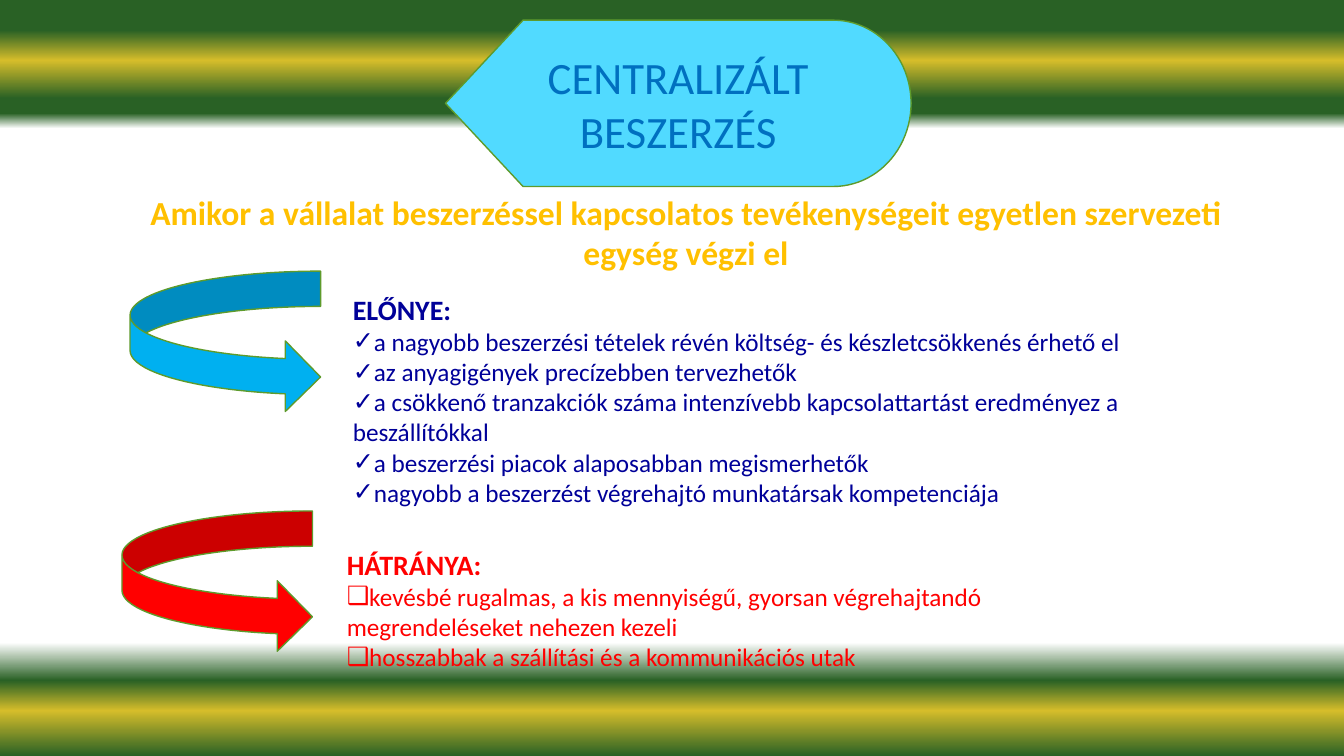
from dataclasses import dataclass

from lxml.etree import SubElement as Sub
from pptx import Presentation
from pptx.dml.color import RGBColor as Rgb
from pptx.enum.shapes import MSO_SHAPE as Form
from pptx.enum.text import MSO_ANCHOR as Anchor, MSO_AUTO_SIZE as Fit, PP_ALIGN as Align
from pptx.oxml.ns import qn
from pptx.util import Pt


@dataclass(frozen=True)
class Theme:
    font: str = "Calibri"
    green: str = "296125"
    gold: str = "D6BD2A"
    white: str = "FFFFFF"
    edge: str = "5E9B2C"
    sky: str = "51DAFF"
    title: str = "0070C0"
    lead: str = "FFC000"
    blue: str = "00B0F0"
    navy: str = "000099"
    red: str = "FF0000"
    title_size: int = 32
    lead_size: int = 24
    head_size: int = 20
    item_size: int = 18


class Page:
    def __init__(self, slide, theme):
        self.slide = slide
        self.theme = theme

    def bands(self, stops):
        """Fill the background with a top-to-bottom gradient of (percent, colour)."""
        fill = self.slide.background.fill
        fill.gradient()
        fill.gradient_angle = 270
        stop_list = self.slide.element.find(".//" + qn("a:gsLst"))
        stop_list.clear()
        for place, color in stops:
            stop = Sub(stop_list, qn("a:gs"), pos=str(place * 1000))
            Sub(stop, qn("a:srgbClr"), val=color)

    def shape(self, form, box, color):
        shape = self.slide.shapes.add_shape(form, *map(Pt, box))
        shape.shadow.inherit = False
        shape.fill.solid()
        shape.fill.fore_color.rgb = Rgb.from_string(color)
        shape.line.color.rgb = Rgb.from_string(self.theme.edge)
        shape.line.width = Pt(1)

    def frame(self, holder, box, anchor=Anchor.TOP):
        """Move a text holder to the front and into its box."""
        holder.element.getparent().append(holder.element)
        holder.left, holder.top, holder.width, holder.height = map(Pt, box)
        frame = holder.text_frame
        frame.word_wrap = True
        frame.auto_size = Fit.NONE
        frame.vertical_anchor = anchor
        return frame

    def text(self, para, words, size, color, bold=False, align=Align.LEFT):
        para.alignment = align
        para.line_spacing = 1.0
        para.space_before = para.space_after = Pt(0)
        run = para.add_run()
        run.text = words
        font = run.font
        font.name, font.size, font.bold = self.theme.font, Pt(size), bold
        font.color.rgb = Rgb.from_string(color)

    def title(self, words, box):
        frame = self.frame(self.slide.shapes.title, box, Anchor.MIDDLE)
        look = self.theme
        self.text(frame.paragraphs[0], words, look.title_size, look.title, align=Align.CENTER)

    def lead(self, words, box):
        holder = self.slide.shapes.add_textbox(*map(Pt, box))
        frame = self.frame(holder, box)
        look = self.theme
        self.text(frame.paragraphs[0], words, look.lead_size, look.lead, True, Align.CENTER)

    def mark(self, para, sign=None):
        """Set the bullet sign, or none, with no indent."""
        props = para._p.get_or_add_pPr()
        props.set("marL", "0")
        props.set("indent", "0")
        if sign:
            Sub(props, qn("a:buChar"), char=sign)
        else:
            Sub(props, qn("a:buNone"))

    def points(self, slot, box, color, sign, head, items):
        frame = self.frame(self.slide.placeholders[slot], box)
        look = self.theme
        para = frame.paragraphs[0]
        self.text(para, head, look.head_size, color, True)
        self.mark(para)
        for item in items:
            para = frame.add_paragraph()
            self.text(para, item, look.item_size, color)
            self.mark(para, sign)


def main():
    deck = Presentation()
    deck.slide_width, deck.slide_height = Pt(960), Pt(540)
    look = Theme()
    page = Page(deck.slides.add_slide(deck.slide_layouts[3]), look)

    page.bands([
        (4, look.green), (8, look.gold), (13, look.green), (15, look.green),
        (17, look.white), (85, look.white),
        (90, look.green), (94, look.gold), (100, look.green),
    ])
    left, top, wide, high = 318.2, 14.4, 332.6, 118.8
    page.shape(Form.FLOWCHART_DISPLAY, (left, top, wide, high), look.sky)
    page.title("CENTRALIZÁLT BESZERZÉS", (left + wide / 6, top, wide * 2 / 3, high))
    page.lead(
        "Amikor a vállalat beszerzéssel kapcsolatos tevékenységeit "
        "egyetlen szervezeti egység végzi el",
        (78.5, 133.2, 823, 65.5),
    )

    page.shape(Form.CURVED_RIGHT_ARROW, (92.9, 193.7, 136.1, 100.8), look.blue)
    page.points(1, (244.8, 205.2, 563, 205.9), look.navy, "✓", "ELŐNYE:", [
        "a nagyobb beszerzési tételek révén költség- és készletcsökkenés érhető el",
        "az anyagigények precízebben tervezhetők",
        "a csökkenő tranzakciók száma intenzívebb kapcsolattartást eredményez a beszállítókkal",
        "a beszerzési piacok alaposabban megismerhetők",
        "nagyobb a beszerzést végrehajtó munkatársak kompetenciája",
    ])

    page.shape(Form.CURVED_RIGHT_ARROW, (87.1, 365, 136.1, 100.8), look.red)
    page.points(2, (240.5, 387.4, 586.8, 140.4), look.red, "❑", "HÁTRÁNYA:", [
        "kevésbé rugalmas, a kis mennyiségű, gyorsan végrehajtandó "
        "megrendeléseket nehezen kezeli",
        "hosszabbak a szállítási és a kommunikációs utak",
    ])
    deck.save("out.pptx")


if __name__ == "__main__":
    main()
